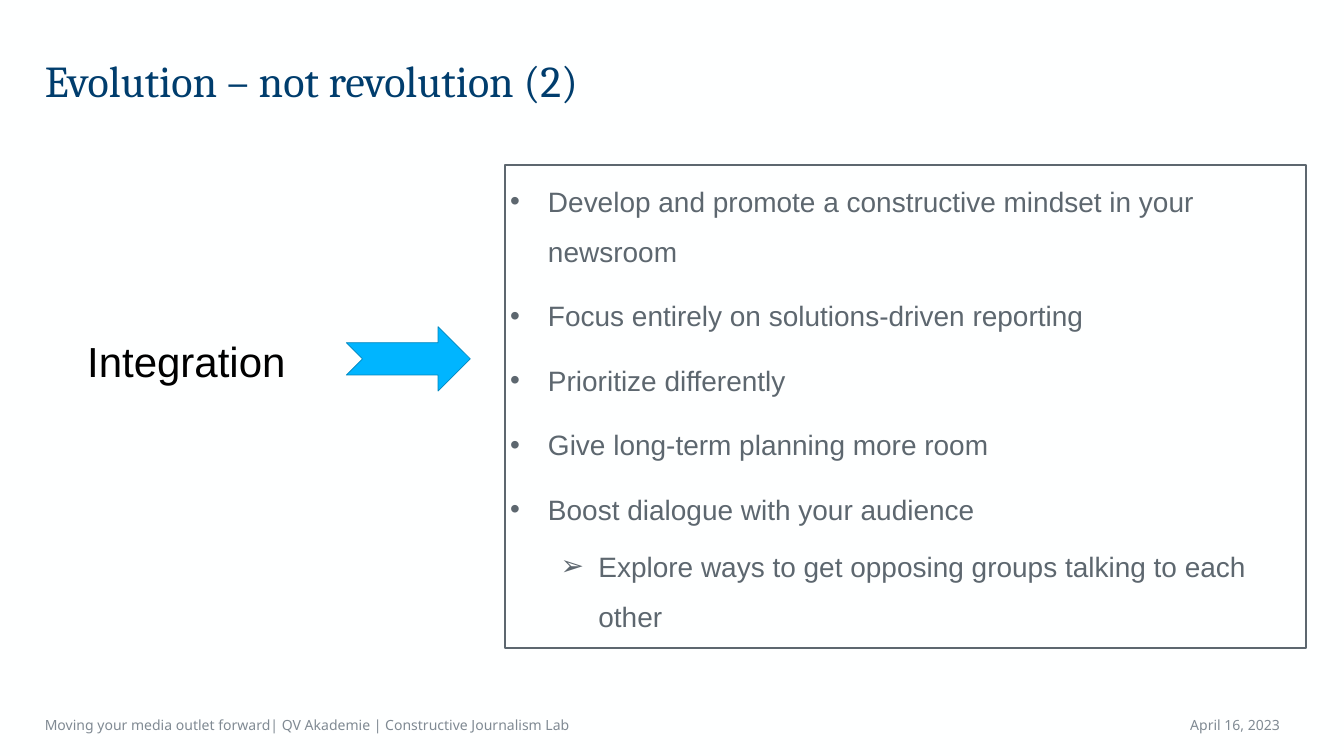
from pptx import Presentation
from pptx.dml.color import RGBColor
from pptx.enum.shapes import MSO_SHAPE
from pptx.enum.text import MSO_ANCHOR, MSO_AUTO_SIZE, PP_ALIGN
from pptx.oxml.ns import qn
from pptx.util import Inches, Pt
from lxml import etree

# Content
TITLE = "Evolution – not revolution (2)"
STAGE = "Integration"
STEPS = [
    (0, "Develop\u00a0and promote a constructive mindset in your newsroom"),
    (0, "Focus entirely on solutions-driven reporting"),
    (0, "Prioritize differently"),
    (0, "Give long-term planning\u00a0more room"),
    (0, "Boost dialogue with your audience"),
    (1, "Explore ways to get opposing groups talking to each other"),
]
FOOTER = "Moving your media outlet forward| QV Akademie | Constructive Journalism Lab"
DATE = "April 16, 2023"

# Per level: left margin (inches), space before (points), bullet
LEVELS = [(0.75, 20, "•"), (1.75, 10, "➢")]
HANGING = 0.75

# Layout in inches
WIDTH, HEIGHT = 26.66, 15
MARGIN = 0.79
FOOT_TOP, FOOT_HEIGHT = 14.07, 0.63

NAVY, SLATE, GREY = "003D6D", "5D676F", "808A93"


def rgb(value):
    return RGBColor.from_string(value)


def place(sp, left, top, width, height):
    sp.left, sp.top, sp.width, sp.height = map(Inches, (left, top, width, height))


def set_frame(sp, anchor):
    tf = sp.text_frame
    tf.word_wrap = True
    tf.auto_size = MSO_AUTO_SIZE.NONE
    tf.vertical_anchor = anchor
    return tf


def format_text(p, font, size, color, align=PP_ALIGN.LEFT):
    p.alignment = align
    for r in p.runs:
        r.font.name, r.font.size = font, Pt(size)
        r.font.color.rgb = rgb(color)


def add_label(s, text, box, font, size, color, anchor, align=PP_ALIGN.LEFT):
    sp = s.shapes.add_textbox(*map(Inches, box))
    tf = set_frame(sp, anchor)
    tf.text = text
    format_text(tf.paragraphs[0], font, size, color, align)


def set_bullet(p, margin, char):
    pPr = p._p.get_or_add_pPr()
    pPr.set("marL", str(Inches(margin)))
    pPr.set("indent", str(-Inches(HANGING)))
    etree.SubElement(pPr, qn("a:buFont")).set("typeface", "Arial")
    etree.SubElement(pPr, qn("a:buChar")).set("char", char)


prs = Presentation()
prs.slide_width, prs.slide_height = Inches(WIDTH), Inches(HEIGHT)
s = prs.slides.add_slide(prs.slide_layouts[1])
s.background.fill.solid()
s.background.fill.fore_color.rgb = rgb("FEFFFF")

# Title
title = s.shapes.title
place(title, MARGIN, MARGIN, 24.71, 1.28)
tf = set_frame(title, MSO_ANCHOR.TOP)
tf.text = TITLE
tf.paragraphs[0].line_spacing = Pt(91)
format_text(tf.paragraphs[0], "Cambria", 63, NAVY)

# Framed list of steps
body = s.placeholders[1]
place(body, 10.02, 3.27, 15.89, 9.59)
body.line.color.rgb = rgb(SLATE)
body.line.width = Pt(2.25)
tf = set_frame(body, MSO_ANCHOR.TOP)
tf.text = "\n".join(text for _, text in STEPS)
for p, (level, _) in zip(tf.paragraphs, STEPS):
    margin, before, char = LEVELS[level]
    p.level = level
    p.line_spacing = 1.5
    p.space_before = Pt(before)
    set_bullet(p, margin, char)
    format_text(p, "Arial", 40, SLATE)

# Footer and date
add_label(s, FOOTER, (MARGIN, FOOT_TOP, 15.6, FOOT_HEIGHT),
          "Noto Sans", 20, GREY, MSO_ANCHOR.MIDDLE)
add_label(s, DATE, (20.77, FOOT_TOP, 4.72, FOOT_HEIGHT),
          "Noto Sans", 20, GREY, MSO_ANCHOR.MIDDLE, PP_ALIGN.RIGHT)

# Stage name and arrow to the list
arrow = s.shapes.add_shape(MSO_SHAPE.NOTCHED_RIGHT_ARROW,
                           *map(Inches, (6.87, 6.48, 2.46, 1.28)))
arrow.shadow.inherit = False
arrow.fill.solid()
arrow.fill.fore_color.rgb = rgb("00B5FF")
arrow.line.color.rgb = rgb("0086BD")
arrow.line.width = Pt(1)
add_label(s, STAGE, (1.63, 6.6, 4.37, 2.32), "Arial", 60, "000000", MSO_ANCHOR.TOP)

prs.save("out.pptx")
